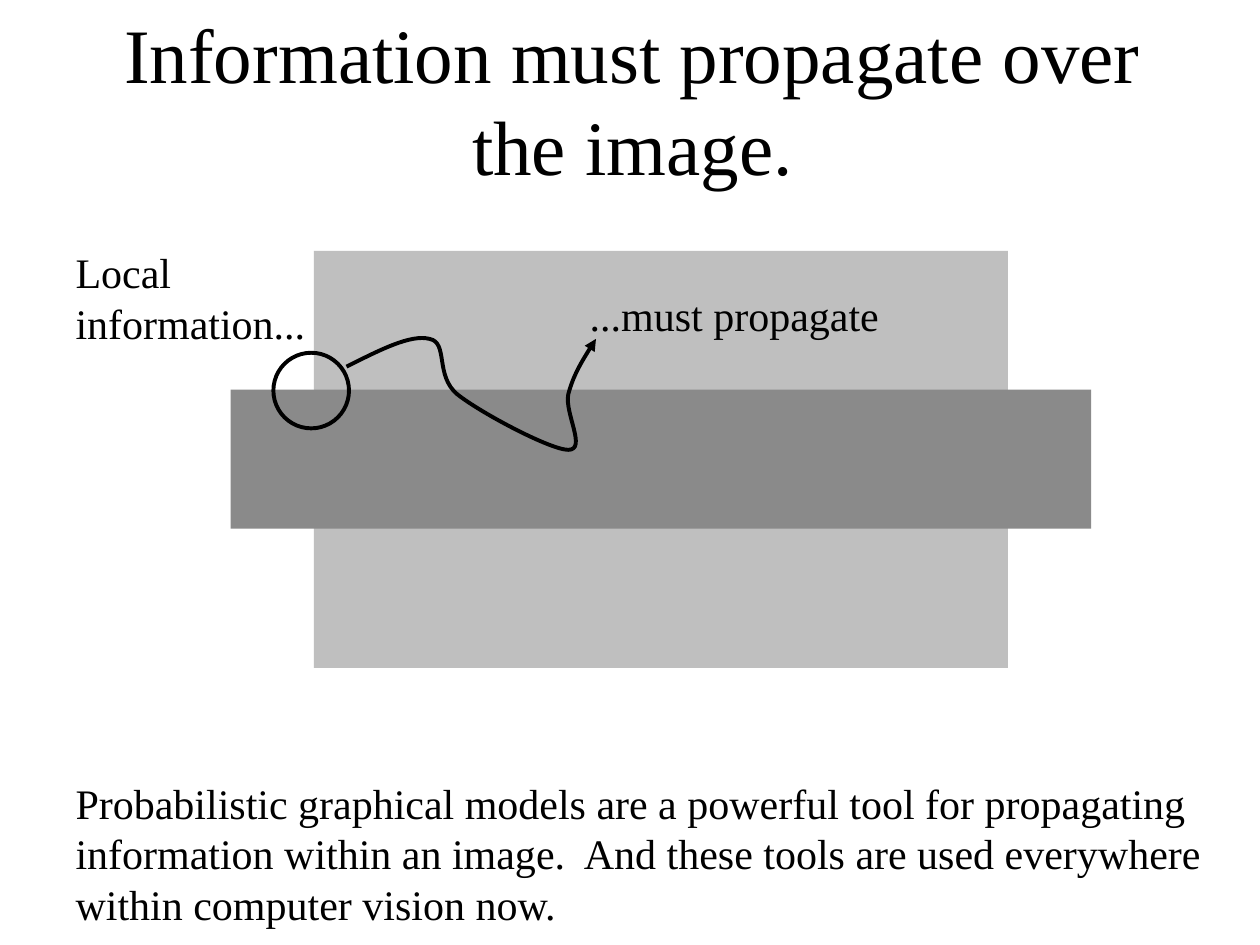
from lxml.etree import SubElement
from pptx import Presentation
from pptx.dml.color import RGBColor
from pptx.enum.shapes import MSO_SHAPE
from pptx.enum.text import MSO_ANCHOR, MSO_AUTO_SIZE, PP_ALIGN
from pptx.oxml.ns import qn
from pptx.util import Inches, Pt

FONT = "Times New Roman"
BLACK = "000000"
INSET = 0.06
INDENT = 0.04


def color(hex_string):
    return RGBColor.from_string(hex_string)


def place(item, left, top, width, height):
    item.left, item.top = Inches(left), Inches(top)
    item.width, item.height = Inches(width), Inches(height)


def write(frame, lines, size, align=PP_ALIGN.LEFT):
    frame.word_wrap = True
    frame.margin_left = frame.margin_right = Inches(INSET)
    frame.margin_top = frame.margin_bottom = Inches(INSET)
    frame.text = "\n".join(lines)
    for paragraph in frame.paragraphs:
        properties = paragraph._p.get_or_add_pPr()
        properties.set("marL", str(Inches(INDENT)))
        properties.set("indent", "0")
        paragraph.alignment = align
        paragraph.font.name = FONT
        paragraph.font.size = Pt(size)
        paragraph.font.color.rgb = color(BLACK)


def add_title(slide, text):
    title = slide.shapes.title
    place(title, 0.5, 0, 9, 1.57)
    write(title.text_frame, [text], 44, PP_ALIGN.CENTER)
    title.text_frame.vertical_anchor = MSO_ANCHOR.MIDDLE
    title.text_frame.auto_size = MSO_AUTO_SIZE.NONE


def add_label(slide, box, *lines):
    label = slide.shapes.add_textbox(*map(Inches, box))
    write(label.text_frame, lines, 24)
    label.text_frame.auto_size = MSO_AUTO_SIZE.SHAPE_TO_FIT_TEXT


def style(shape, fill=None, line=None):
    shape.shadow.inherit = False
    if fill:
        shape.fill.solid()
        shape.fill.fore_color.rgb = color(fill)
    else:
        shape.fill.background()
    if line:
        shape.line.color.rgb = color(line)
        shape.line.width = Pt(2.25)
    else:
        shape.line.fill.background()


def add_area(slide, kind, box, **look):
    area = slide.shapes.add_shape(kind, *map(Inches, box))
    style(area, **look)


def add_curved_arrow(slide, start, points):
    """Draw a Bezier path; every three points are two controls and an end."""
    builder = slide.shapes.build_freeform(*map(Inches, start))
    builder.add_line_segments(
        [(Inches(x), Inches(y)) for x, y in points], close=False)
    arrow = builder.convert_to_shape()
    style(arrow, line=BLACK)

    # Join each three straight segments into one cubic curve
    path = next(arrow._element.iter(qn("a:path")))
    segments = path.findall(qn("a:lnTo"))
    for first in range(0, len(segments), 3):
        curve = SubElement(path, qn("a:cubicBezTo"))
        for segment in segments[first:first + 3]:
            curve.append(segment[0])
            path.remove(segment)

    SubElement(arrow.line._get_or_add_ln(), qn("a:tailEnd"), type="triangle")


def main():
    deck = Presentation()
    deck.slide_width, deck.slide_height = Inches(10), Inches(7.5)
    slide = deck.slides.add_slide(deck.slide_layouts[5])

    # Light square behind a dark bar, a third of its height
    square_top, square_height = 1.99, 3.31
    bar_height = square_height / 3
    add_area(slide, MSO_SHAPE.RECTANGLE,
             (2.49, square_top, 5.51, square_height), fill="BFBFBF")
    add_area(slide, MSO_SHAPE.RECTANGLE,
             (1.83, square_top + bar_height, 6.83, bar_height), fill="8A8A8A")

    # Local neighbourhood and the route its information takes
    add_area(slide, MSO_SHAPE.OVAL, (2.17, 2.8, 0.6, 0.6), line=BLACK)
    add_curved_arrow(slide, (2.75, 2.91), [
        (3.01, 2.78), (3.26, 2.65), (3.41, 2.69),
        (3.56, 2.72), (3.45, 2.98), (3.63, 3.13),
        (3.82, 3.28), (4.37, 3.57), (4.51, 3.57),
        (4.66, 3.57), (4.48, 3.28), (4.51, 3.13),
        (4.55, 2.98), (4.64, 2.83), (4.73, 2.69),
    ])

    # Wording
    add_label(slide, (0.5, 1.9, 2.26, 0.85), "Local information...")
    add_label(slide, (4.58, 2.24, 3.01, 0.47), "...must propagate")
    add_label(slide, (0.5, 6.11, 9.5, 1.22),
              "Probabilistic graphical models are a powerful tool for propagating",
              "information within an image.  And these tools are used everywhere "
              "within computer vision now.")
    add_title(slide, "Information must propagate over the image.")

    deck.save("out.pptx")


if __name__ == "__main__":
    main()
